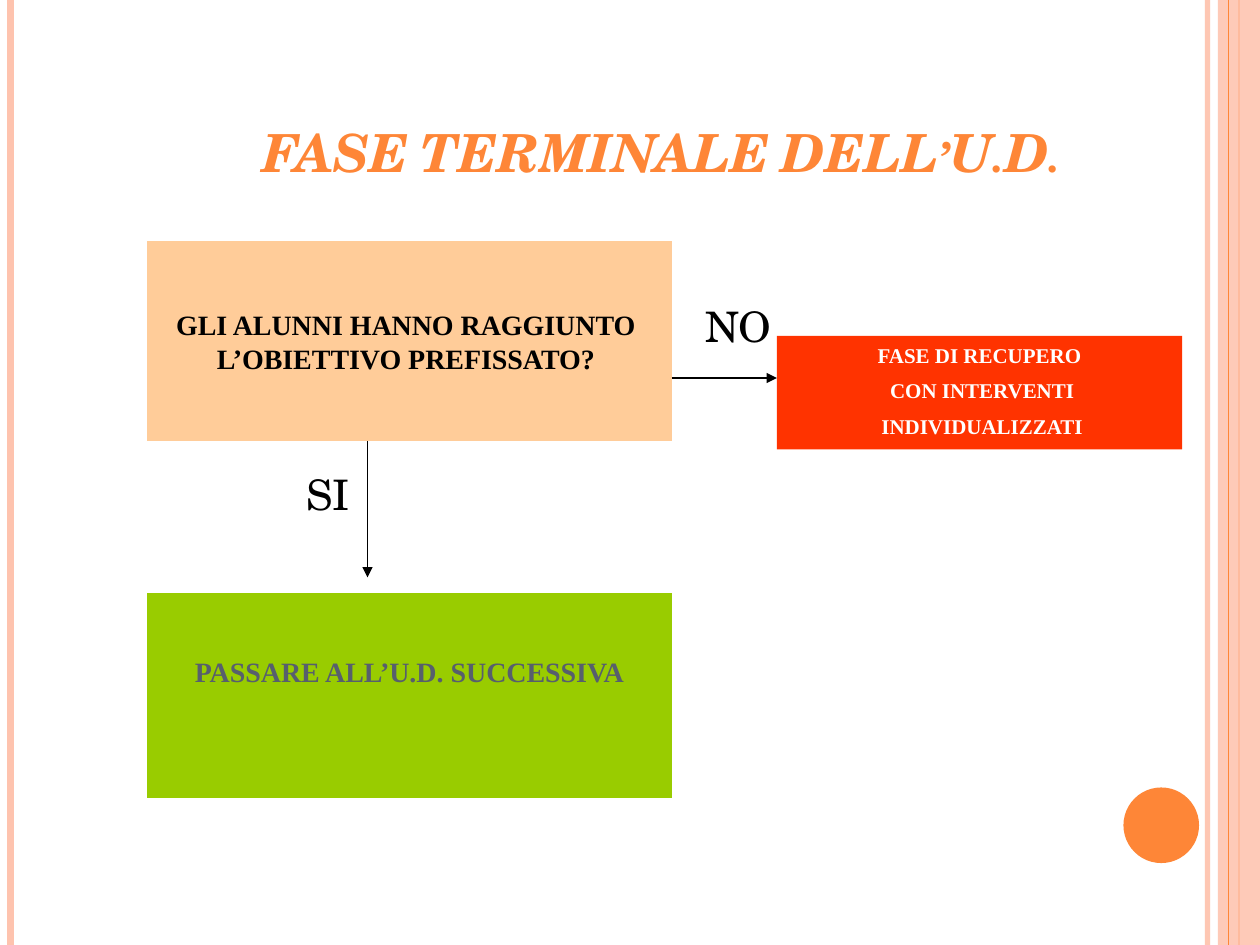
from lxml import etree
from pptx import Presentation
from pptx.dml.color import RGBColor
from pptx.enum.shapes import MSO_CONNECTOR, MSO_SHAPE
from pptx.enum.text import MSO_ANCHOR, PP_ALIGN
from pptx.oxml.ns import qn
from pptx.util import Inches, Pt

STRAIGHT = MSO_CONNECTOR.STRAIGHT
RECT, OVAL, PROCESS = MSO_SHAPE.RECTANGLE, MSO_SHAPE.OVAL, MSO_SHAPE.FLOWCHART_PROCESS
TOP, MIDDLE, BOTTOM = MSO_ANCHOR.TOP, MSO_ANCHOR.MIDDLE, MSO_ANCHOR.BOTTOM
LEFT, CENTER = PP_ALIGN.LEFT, PP_ALIGN.CENTER

ORANGE, PINK = RGBColor(0xFE, 0x86, 0x37), RGBColor(0xFE, 0xC3, 0xAE)
PEACH, GREEN = RGBColor(0xFF, 0xCC, 0x99), RGBColor(0x99, 0xCC, 0x00)
RED, SLATE = RGBColor(0xFF, 0x33, 0x00), RGBColor(0x57, 0x5F, 0x6D)
BLACK, WHITE = RGBColor(0, 0, 0), RGBColor(0xFF, 0xFF, 0xFF)
SCHOLA, TIMES = "TeX Gyre Schola", "Times New Roman"

# Content: places are columns and rows of a 120 x 90 grid
COLUMNS, ROWS = 120, 90
WIDTH, HEIGHT = Inches(10), Inches(7.5)

TITLE = "FASE TERMINALE DELL’U.D."
TITLE_PLACE = (12, 3, 102, 15)

# column, colour, width in points, opacity in percent
STRIPES = [(115, PINK, 3, 93), (1, PINK, 4.5, 100),
           (118, ORANGE, 1.5, 100), (117, ORANGE, 0.75, 100)]
# shape, place, colour, opacity
ORNAMENTS = [(RECT, (116, 0, 4, 90), PINK, 87),
             (OVAL, (107, 75, 7.2, 7.2), ORANGE, 100)]
# shape, place, fill, lines, size, text colour, anchor, wrap, bottom inset
STEPS = [
    (PROCESS, (14, 23, 50, 19), PEACH,
     ["GLI ALUNNI HANNO RAGGIUNTO ", "L’OBIETTIVO PREFISSATO? "],
     16, BLACK, MIDDLE, False, 0.05),
    (PROCESS, (14, 56.5, 50, 19.5), GREEN, ["PASSARE ALL’U.D. SUCCESSIVA"],
     16, SLATE, MIDDLE, False, 0.43),
    (RECT, (74, 32, 38.6, 10.8), RED,
     ["FASE DI RECUPERO", " CON INTERVENTI", " INDIVIDUALIZZATI"],
     12, WHITE, TOP, True, 0.05),
]
ANSWERS = [("NO", (66, 28, 9, 6)), ("SI", (28, 44, 7, 6))]
ARROWS = [(64, 36, 74, 36), (35, 42, 35, 55)]


def on_grid(place):
    """Turn (column, row, column, row) into slide lengths."""
    units = (WIDTH / COLUMNS, HEIGHT / ROWS) * 2
    return [round(value * unit) for value, unit in zip(place, units)]


def set_opacity(properties, percent):
    if percent < 100:
        color = next(properties.iter(qn("a:srgbClr")))
        etree.SubElement(color, qn("a:alpha")).set("val", str(percent * 1000))


def write(frame, lines, size, font, color, align=LEFT, bold=False, gap=0):
    for index, line in enumerate(lines):
        paragraph = frame.paragraphs[0] if index == 0 else frame.add_paragraph()
        paragraph.alignment = align
        paragraph.space_before = Pt(gap if index else 0)
        run = paragraph.add_run()
        run.text = line
        run.font.name, run.font.size = font, Pt(size)
        run.font.bold = bold
        run.font.color.rgb = color


def add_line(shapes, place, color, width, opacity=100, arrow=False):
    line = shapes.add_connector(STRAIGHT, *on_grid(place))
    line.line.color.rgb, line.line.width = color, Pt(width)
    properties = line._element.spPr
    set_opacity(properties, opacity)
    if arrow:
        etree.SubElement(properties.find(qn("a:ln")), qn("a:tailEnd")).set("type", "triangle")
    etree.SubElement(properties, qn("a:effectLst"))


def add_block(shapes, kind, place, color, opacity=100):
    block = shapes.add_shape(kind, *on_grid(place))
    block.shadow.inherit = False
    block.fill.solid()
    block.fill.fore_color.rgb = color
    block.line.fill.background()
    set_opacity(block._element.spPr, opacity)
    return block


def main():
    deck = Presentation()
    deck.slide_width, deck.slide_height = WIDTH, HEIGHT
    slide = deck.slides.add_slide(deck.slide_layouts[5])
    shapes = slide.shapes

    # Side stripes and ornaments
    for column, color, width, opacity in STRIPES[:3]:
        add_line(shapes, (column, 0, column, ROWS), color, width, opacity)
    for ornament in ORNAMENTS:
        add_block(shapes, *ornament)
    for column, color, width, opacity in STRIPES[3:]:
        add_line(shapes, (column, 0, column, ROWS), color, width, opacity)

    # Title
    title = shapes.title
    title.left, title.top, title.width, title.height = on_grid(TITLE_PLACE)
    title.text_frame.vertical_anchor = BOTTOM
    write(title.text_frame, [TITLE], 30, SCHOLA, ORANGE, CENTER, bold=True)
    title_run = title.text_frame.paragraphs[0].runs[0]
    title_run.font.italic = True
    title_run.font._element.set("cap", "small")

    # Question and outcomes
    for kind, place, fill, lines, size, color, anchor, wrap, inset in STEPS:
        frame = add_block(shapes, kind, place, fill).text_frame
        frame.word_wrap, frame.vertical_anchor = wrap, anchor
        frame.margin_bottom = Inches(inset)
        write(frame, lines, size, TIMES, color, CENTER, bold=True,
              gap=size / 2 if kind == RECT else 0)

    # Answers and arrows
    for answer, place in ANSWERS:
        frame = shapes.add_textbox(*on_grid(place)).text_frame
        frame.word_wrap = True
        write(frame, [answer], 24, SCHOLA, BLACK)
    for place in ARROWS:
        add_line(shapes, place, BLACK, 0.75, arrow=True)

    deck.save("out.pptx")


if __name__ == "__main__":
    main()
